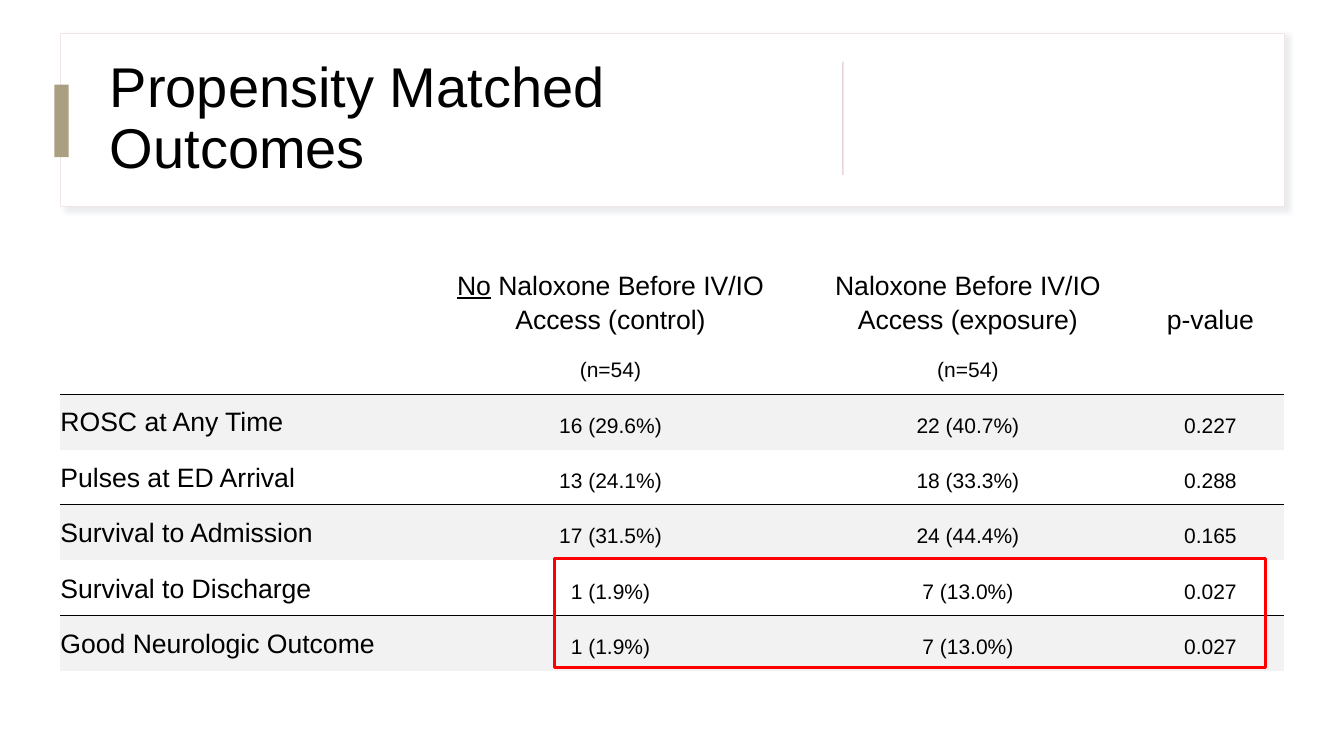
from lxml.etree import SubElement
from pptx import Presentation
from pptx.dml.color import RGBColor
from pptx.enum.shapes import MSO_SHAPE
from pptx.enum.text import MSO_ANCHOR, MSO_AUTO_SIZE, PP_ALIGN
from pptx.oxml import parse_xml
from pptx.oxml.ns import nsdecls, qn
from pptx.util import Inches, Pt

COL_WIDTHS = [3.67, 3.66, 3.43, 1.38]
ROW_HEIGHTS = [0.91, 0.47] + [0.55] * 5
OUTCOMES = [
    ["", "No| Naloxone Before IV/IO Access (control)",
     "Naloxone Before IV/IO Access (exposure)", "p-value"],
    ["", "(n=54)", "(n=54)", ""],
    ["ROSC at Any Time", "16 (29.6%)", "22 (40.7%)", "0.227"],
    ["Pulses at ED Arrival", "13 (24.1%)", "18 (33.3%)", "0.288"],
    ["Survival to Admission", "17 (31.5%)", "24 (44.4%)", "0.165"],
    ["Survival to Discharge", "1 (1.9%)", "7 (13.0%)", "0.027"],
    ["Good Neurologic Outcome", "1 (1.9%)", "7 (13.0%)", "0.027"],
]


def rgb(value):
    return RGBColor.from_string(value)


class SlideBuilder:
    font, ink, band = "Arial", "000000", "F2F2F2"

    def __init__(self, slide):
        self.s = slide

    def style(self, p, size):
        for r in p.runs:
            r.font.name = self.font
            r.font.size = Pt(size)
            r.font.color.rgb = rgb(self.ink)

    def title(self, text, x, y, w, h):
        sp = self.s.shapes.title
        sp.left, sp.top, sp.width, sp.height = map(Inches, (x, y, w, h))
        tf = sp.text_frame
        tf.text = text
        tf.word_wrap = True
        tf.auto_size = MSO_AUTO_SIZE.NONE
        tf.vertical_anchor = MSO_ANCHOR.MIDDLE
        p = tf.paragraphs[0]
        p.alignment = PP_ALIGN.LEFT
        p.line_spacing = 0.9
        self.style(p, 40)
        self.s.shapes._spTree.append(sp._element)  # bring in front of the card

    def rect(self, x, y, w, h, fill=None, line=None, weight=1, rotation=0):
        sp = self.s.shapes.add_shape(MSO_SHAPE.RECTANGLE, *map(Inches, (x, y, w, h)))
        sp.shadow.inherit = False
        sp.rotation = rotation
        if fill:
            sp.fill.solid()
            sp.fill.fore_color.rgb = rgb(fill)
        else:
            sp.fill.background()
        if line:
            sp.line.color.rgb = rgb(line)
            sp.line.width = Pt(weight)
        else:
            sp.line.fill.background()
        return sp

    def shadow(self, sp, color, alpha, blur, dist, angle):
        effects = sp._element.spPr.find(qn("a:effectLst"))
        shdw = SubElement(effects, qn("a:outerShdw"), blurRad=str(Pt(blur)),
                          dist=str(Pt(dist)), dir=str(angle * 60000),
                          algn="tl", rotWithShape="0")
        clr = SubElement(shdw, qn("a:srgbClr"), val=color)
        SubElement(clr, qn("a:alpha"), val=str(alpha * 1000))

    def borders(self, cell, ruled):
        tcPr = cell._tc.get_or_add_tcPr()
        for i, side in enumerate("LRTB"):
            fill = (f'<a:solidFill><a:srgbClr val="{self.ink}"/></a:solidFill>'
                    if side == ruled else "<a:noFill/>")
            tcPr.insert(i, parse_xml(
                f'<a:ln{side} {nsdecls("a")} w="{Pt(0.75)}">{fill}</a:ln{side}>'))

    def cell(self, cell, text, row, col):
        cell.margin_left, cell.margin_right = 0, Inches(0.09)
        cell.margin_top = Inches(0.04 if row else 0.02)
        cell.margin_bottom = Inches(0.12)
        cell.vertical_anchor = MSO_ANCHOR.BOTTOM
        shaded = row > 1 and row % 2 == 0
        if shaded:
            cell.fill.solid()
            cell.fill.fore_color.rgb = rgb(self.band)
        else:
            cell.fill.background()
        # Rules run along the seam above each shaded row
        self.borders(cell, "T" if shaded else "B" if row else None)
        if not text:
            return
        p = cell.text_frame.paragraphs[0]
        p.alignment = PP_ALIGN.CENTER if col else PP_ALIGN.LEFT
        p.line_spacing = 1.15
        underlined, bar, rest = text.rpartition("|")
        if bar:
            r = p.add_run()
            r.text = underlined
            r.font.underline = True
        p.add_run().text = rest
        self.style(p, 19 if row == 0 or col == 0 else 15)

    def table(self, rows, x, y, widths, heights):
        frame = self.s.shapes.add_table(len(rows), len(widths), Inches(x), Inches(y),
                                        Inches(sum(widths)), Inches(sum(heights)))
        tbl = frame.table
        tbl.first_row = tbl.horz_banding = False
        for column, w in zip(tbl.columns, widths):
            column.width = Inches(w)
        for row, h in zip(tbl.rows, heights):
            row.height = Inches(h)
        for i, texts in enumerate(rows):
            for j, text in enumerate(texts):
                self.cell(tbl.cell(i, j), text, i, j)


def main():
    prs = Presentation()
    prs.slide_width, prs.slide_height = Inches(13.33), Inches(7.5)
    b = SlideBuilder(prs.slides.add_slide(prs.slide_layouts[5]))

    # Title card with accents
    card = b.rect(0.6, 0.33, 12.14, 1.72, fill="FFFFFF", line="F0E5E5")
    b.shadow(card, "BCBECA", alpha=30, blur=4, dist=3, angle=45)
    b.title("Propensity Matched Outcomes", 0.99, 0.44, 7.03, 1.5)
    b.rect(0.54, 0.84, 0.14, 0.72, fill="AAA081")
    b.rect(7.8, 1.17, 1.12, 0.01, fill="DBBDBF", rotation=90)

    # Outcome table
    b.table(OUTCOMES, 0.6, 2.53, COL_WIDTHS, ROW_HEIGHTS)

    # Highlight of the significant results
    b.rect(5.5, 5.54, 7.05, 1.08, line="FF0000", weight=2.25)

    prs.save("out.pptx")


if __name__ == "__main__":
    main()
